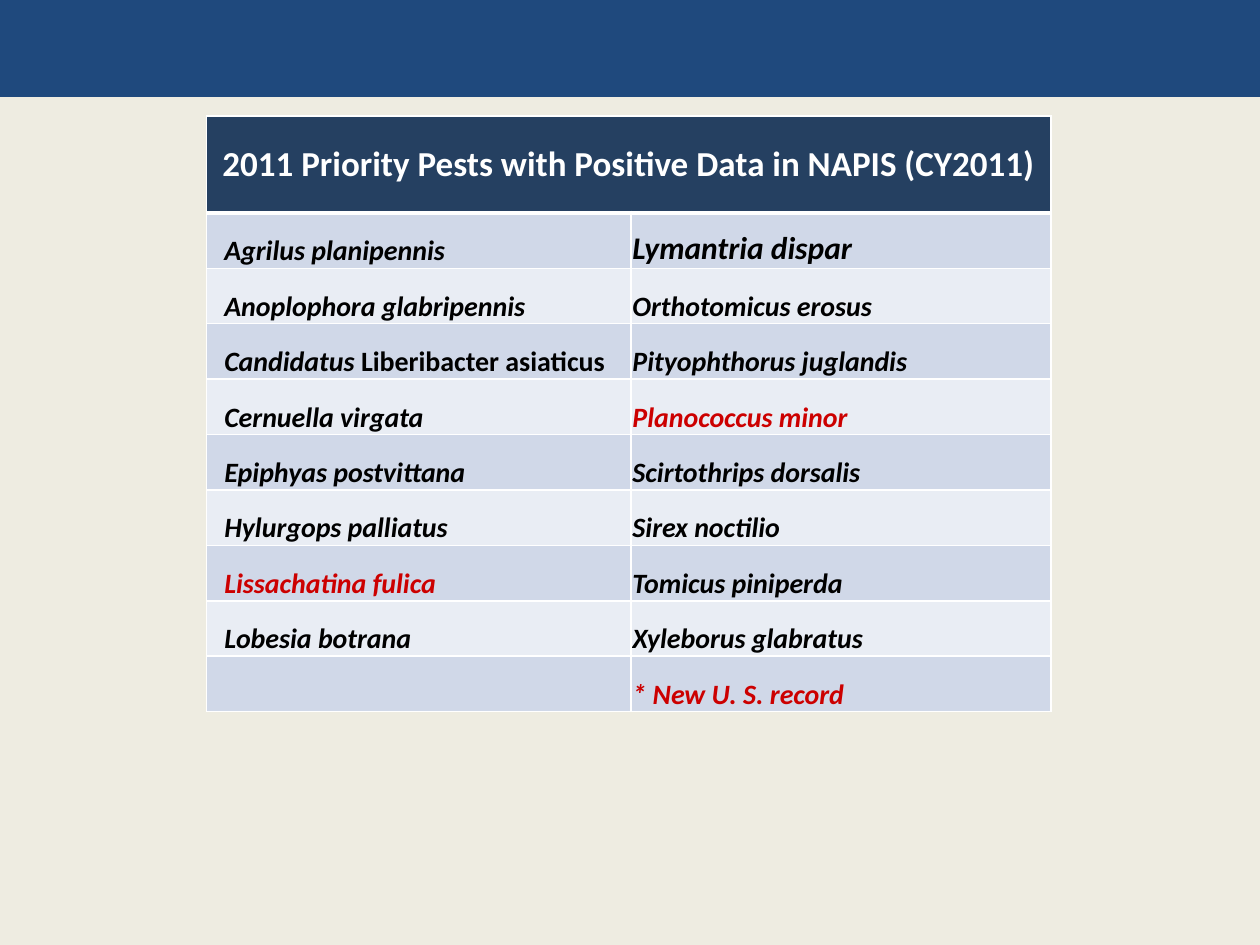
from lxml.etree import SubElement
from pptx import Presentation
from pptx.dml.color import RGBColor
from pptx.enum.shapes import MSO_SHAPE
from pptx.enum.text import MSO_ANCHOR, PP_ALIGN
from pptx.oxml.ns import qn
from pptx.util import Inches, Pt

COLORS = {
    "background": "EEECE1", "banner": "1F497D", "header": "254061",
    "odd": "D0D8E8", "even": "E9EDF4", "border": "FFFFFF",
    "white": "FFFFFF", "black": "000000", "new": "CC0000",
}
FONT = "Calibri"
TITLE = "2011 Priority Pests with Positive Data in NAPIS (CY2011)"
PESTS = [
    ("Agrilus planipennis", "Lymantria dispar"),
    ("Anoplophora glabripennis", "Orthotomicus erosus"),
    ("Candidatus Liberibacter asiaticus", "Pityophthorus juglandis"),
    ("Cernuella virgata", "Planococcus minor"),
    ("Epiphyas postvittana", "Scirtothrips dorsalis"),
    ("Hylurgops palliatus", "Sirex noctilio"),
    ("Lissachatina fulica", "Tomicus piniperda"),
    ("Lobesia botrana", "Xyleborus glabratus"),
    ("", "* New U. S. record"),
]
NEW_RECORDS = {"Planococcus minor", "Lissachatina fulica", "* New U. S. record"}
UPRIGHT = "Liberibacter asiaticus"
LARGER = "Lymantria dispar"


def rgb(name):
    return RGBColor.from_string(COLORS[name])


def add_banner(slide, width):
    sp = slide.shapes.add_shape(MSO_SHAPE.RECTANGLE, 0, 0, width, Inches(0.77))
    sp.shadow.inherit = False
    sp.fill.solid()
    sp.fill.fore_color.rgb = rgb("banner")
    sp.line.fill.background()


def style_cell(cell, fill, top=1, bottom=1):
    """Set the borders (widths in points), then the fill that must follow them."""
    tcPr = cell._tc.get_or_add_tcPr()
    for side, width in (("L", 1), ("R", 1), ("T", top), ("B", bottom)):
        ln = SubElement(tcPr, qn(f"a:ln{side}"), w=str(Pt(width)))
        solid = SubElement(ln, qn("a:solidFill"))
        SubElement(solid, qn("a:srgbClr"), val=COLORS["border"])
    cell.fill.solid()
    cell.fill.fore_color.rgb = rgb(fill)


def add_run(p, text, size, color, italic=False):
    r = p.add_run()
    r.text = text
    r.font.name = FONT
    r.font.size = Pt(size)
    r.font.bold = True
    r.font.italic = italic
    r.font.color.rgb = rgb(color)


def fill_header(table):
    for cell in table.rows[0].cells:
        style_cell(cell, "header", bottom=3)
    head = table.cell(0, 0)
    head.merge(table.cell(0, 1))
    head.vertical_anchor = MSO_ANCHOR.MIDDLE
    p = head.text_frame.paragraphs[0]
    p.alignment = PP_ALIGN.CENTER
    add_run(p, TITLE, 20, "white")


def fill_name(cell, name, indented):
    cell.vertical_anchor = MSO_ANCHOR.BOTTOM
    cell.margin_left = cell.margin_right = cell.margin_top = Inches(0.01)
    cell.margin_bottom = 0
    p = cell.text_frame.paragraphs[0]
    if indented:
        pPr = p._p.get_or_add_pPr()
        pPr.set("marL", str(Inches(0.13)))
        pPr.set("indent", "0")
    color = "new" if name in NEW_RECORDS else "black"
    italic_part, upright, _ = name.partition(UPRIGHT)
    add_run(p, italic_part, 18 if name == LARGER else 16, color, italic=True)
    if upright:
        add_run(p, upright, 16, color)


def add_pest_table(slide):
    table = slide.shapes.add_table(
        len(PESTS) + 1, 2, Inches(1.64), Inches(0.92), Inches(6.7), Inches(4.69)
    ).table
    for column, width in zip(table.columns, (3.37, 3.33)):
        column.width = Inches(width)
    for i, row in enumerate(table.rows):
        row.height = Inches(0.44 if i else 0.77)
    fill_header(table)
    for i, names in enumerate(PESTS, start=1):
        for j, name in enumerate(names):
            cell = table.cell(i, j)
            style_cell(cell, "odd" if i % 2 else "even", top=3 if i == 1 else 1)
            if name:
                fill_name(cell, name, indented=j == 0)


def main():
    prs = Presentation()
    prs.slide_width, prs.slide_height = Inches(10), Inches(7.5)
    slide = prs.slides.add_slide(prs.slide_layouts[6])
    slide.background.fill.solid()
    slide.background.fill.fore_color.rgb = rgb("background")
    add_banner(slide, prs.slide_width)
    add_pest_table(slide)
    prs.save("out.pptx")


if __name__ == "__main__":
    main()
